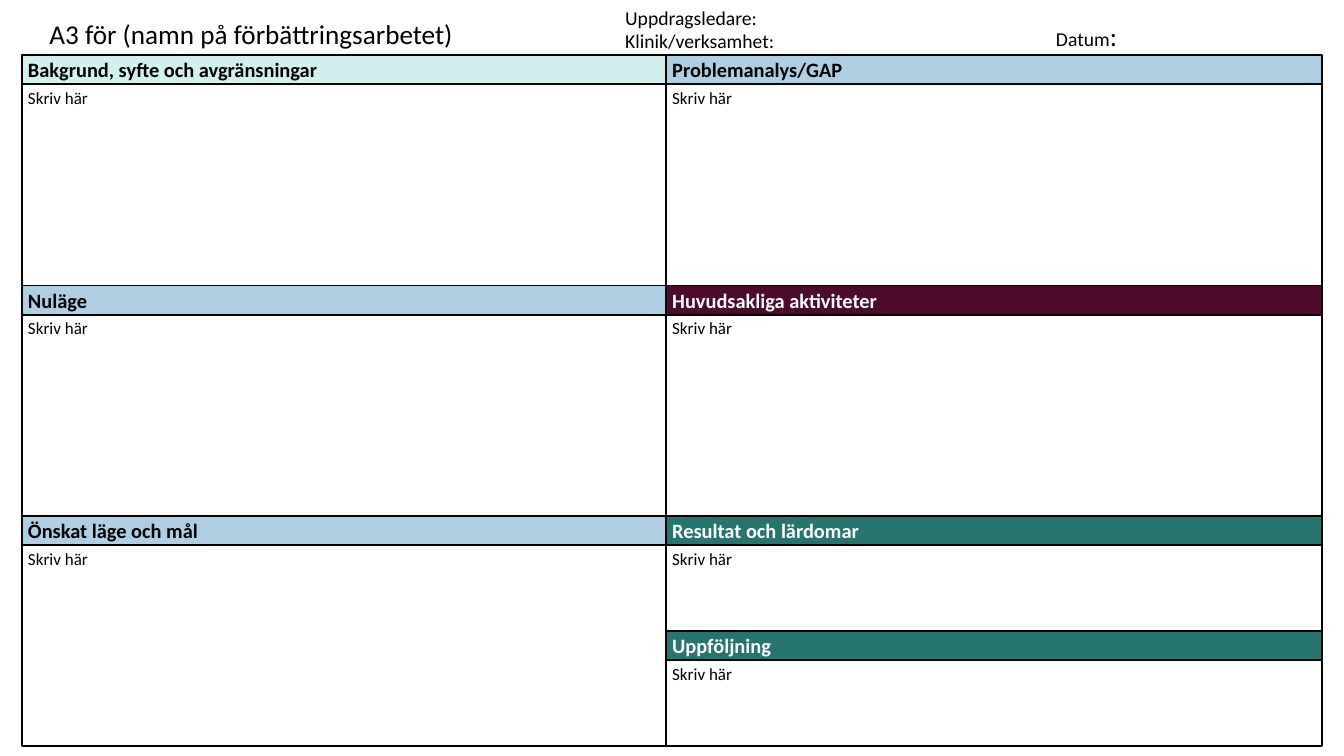
from dataclasses import dataclass

from pptx import Presentation
from pptx.dml.color import RGBColor
from pptx.enum.shapes import MSO_SHAPE
from pptx.enum.text import MSO_ANCHOR, MSO_AUTO_SIZE, PP_ALIGN
from pptx.shapes.autoshape import Shape
from pptx.slide import Slide
from pptx.text.text import Font, TextFrame
from pptx.util import Inches, Pt

BLACK = RGBColor(0x00, 0x00, 0x00)
WHITE = RGBColor(0xFF, 0xFF, 0xFF)
MINT = RGBColor(0xD1, 0xF0, 0xEE)
LIGHT_BLUE = RGBColor(0xAD, 0xCE, 0xE3)
BURGUNDY = RGBColor(0x4D, 0x0B, 0x2C)
TEAL = RGBColor(0x26, 0x76, 0x6F)

FONT_NAME = "Calibri"
TITLE_SIZE = 32
DETAIL_SIZE = 23.1
HEADING_SIZE = 24
BODY_SIZE = 20

GRID_TOP = 0.9
HEADING_HEIGHT = 0.48
FULL_HEIGHT = 3.77
HALF_HEIGHT = FULL_HEIGHT / 2


@dataclass(frozen=True)
class Box:
    left: float
    top: float
    width: float
    height: float


@dataclass(frozen=True)
class Panel:
    heading: str
    fill: RGBColor
    text_color: RGBColor = BLACK
    height: float = FULL_HEIGHT


@dataclass(frozen=True)
class Column:
    left: float
    width: float
    panels: tuple[Panel, ...]


COLUMNS = (
    Column(0.36, 10.53, (
        Panel("Bakgrund, syfte och avgränsningar", MINT),
        Panel("Nuläge", LIGHT_BLUE),
        Panel("Önskat läge och mål", LIGHT_BLUE),
    )),
    Column(10.9, 10.73, (
        Panel("Problemanalys/GAP", LIGHT_BLUE),
        Panel("Huvudsakliga aktiviteter", BURGUNDY, WHITE),
        Panel("Resultat och lärdomar", TEAL, WHITE, HALF_HEIGHT),
        Panel("Uppföljning", TEAL, WHITE, HALF_HEIGHT),
    )),
)


def style_font(font: Font, size: float, color: RGBColor = BLACK, bold: bool = False) -> None:
    font.name = FONT_NAME
    font.size = Pt(size)
    font.bold = bold
    font.color.rgb = color


def write_text(frame: TextFrame, text: str, size: float, color: RGBColor = BLACK,
               bold: bool = False, anchor: MSO_ANCHOR = MSO_ANCHOR.TOP) -> None:
    frame.text = text
    frame.word_wrap = True
    frame.vertical_anchor = anchor
    for paragraph in frame.paragraphs:
        paragraph.alignment = PP_ALIGN.LEFT
        style_font(paragraph.font, size, color, bold)


def place(shape: Shape, box: Box) -> None:
    shape.left, shape.top = Inches(box.left), Inches(box.top)
    shape.width, shape.height = Inches(box.width), Inches(box.height)


def add_title(slide: Slide, box: Box, text: str) -> None:
    title = slide.shapes.title
    place(title, box)
    write_text(title.text_frame, text, TITLE_SIZE)
    title.text_frame.auto_size = MSO_AUTO_SIZE.SHAPE_TO_FIT_TEXT
    title.text_frame.paragraphs[0].line_spacing = 1.0


def add_label(slide: Slide, box: Box, text: str) -> TextFrame:
    label = slide.shapes.add_textbox(
        Inches(box.left), Inches(box.top), Inches(box.width), Inches(box.height))
    write_text(label.text_frame, text, DETAIL_SIZE)
    label.text_frame.auto_size = MSO_AUTO_SIZE.SHAPE_TO_FIT_TEXT
    return label.text_frame


def add_frame(slide: Slide, box: Box) -> Shape:
    frame = slide.shapes.add_shape(
        MSO_SHAPE.RECTANGLE,
        Inches(box.left), Inches(box.top), Inches(box.width), Inches(box.height))
    frame.shadow.inherit = False
    frame.fill.background()
    frame.line.color.rgb = BLACK
    frame.line.width = Pt(2)
    return frame


def add_panel(slide: Slide, column: Column, panel: Panel, top: float) -> None:
    body = add_frame(slide, Box(column.left, top + HEADING_HEIGHT,
                                column.width, panel.height - HEADING_HEIGHT))
    write_text(body.text_frame, "Skriv här", BODY_SIZE)

    heading = add_frame(slide, Box(column.left, top, column.width, HEADING_HEIGHT))
    heading.fill.solid()
    heading.fill.fore_color.rgb = panel.fill
    write_text(heading.text_frame, panel.heading, HEADING_SIZE, panel.text_color,
               bold=True, anchor=MSO_ANCHOR.MIDDLE)


def main() -> None:
    presentation = Presentation()
    presentation.slide_width = Inches(21.99)
    presentation.slide_height = Inches(12.37)
    title_only = presentation.slide_layouts.get_by_name("Title Only")
    slide = presentation.slides.add_slide(title_only)

    add_title(slide, Box(0.71, 0.24, 10.29, 0.64), "A3 för (namn på förbättringsarbetet)")
    add_label(slide, Box(10.13, 0.04, 6.18, 0.88), "Uppdragsledare:\nKlinik/verksamhet:")
    date = add_label(slide, Box(17.18, 0.26, 4.44, 0.64), "Datum")
    colon = date.paragraphs[0].add_run()
    colon.text = ":"
    colon.font.size = Pt(TITLE_SIZE)

    for column in COLUMNS:
        top = GRID_TOP
        for panel in column.panels:
            add_panel(slide, column, panel, top)
            top += panel.height

    presentation.save("out.pptx")


if __name__ == "__main__":
    main()
